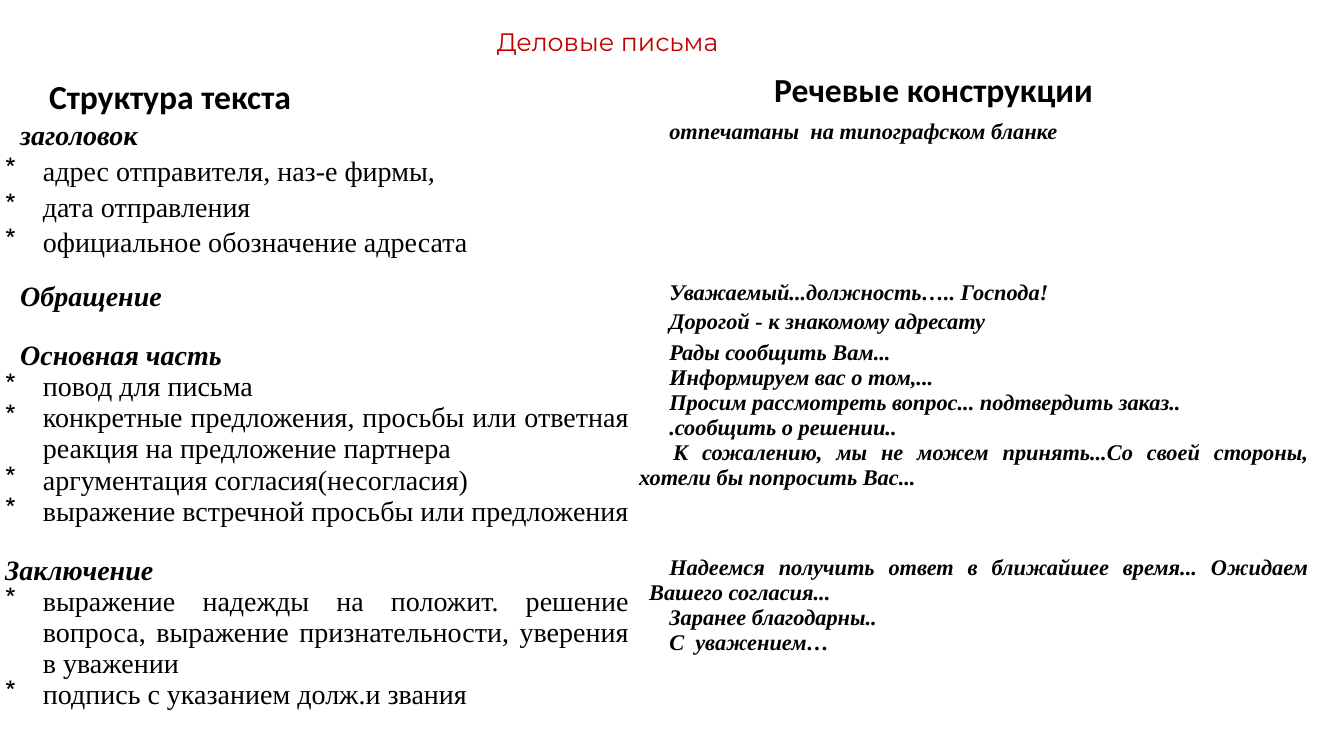
from dataclasses import dataclass

from lxml import etree
from pptx import Presentation
from pptx.dml.color import RGBColor
from pptx.enum.text import MSO_ANCHOR, MSO_AUTO_SIZE, PP_ALIGN
from pptx.oxml.ns import qn
from pptx.util import Pt

LEFT, CENTER, JUSTIFY = PP_ALIGN.LEFT, PP_ALIGN.CENTER, PP_ALIGN.JUSTIFY
TOP = MSO_ANCHOR.TOP
NO_FIT = MSO_AUTO_SIZE.NONE


@dataclass(frozen=True)
class Theme:
    ink: RGBColor = RGBColor(0, 0, 0)
    red: RGBColor = RGBColor(0xC0, 0, 0)
    serif: str = "Times New Roman"
    sans: str = "Calibri"
    title_font: str = "Montserrat"
    title: int = 18
    head: int = 24
    point: int = 20
    phrase: int = 16


THEME = Theme()
COLS = (452.9, 485.3)

# Row height, line spacing, indent of the name, name, points, phrases
SECTIONS = [
    (115.2, 1.15, 10.8, "заголовок",
     ["адрес отправителя, наз-е фирмы,",
      "дата отправления",
      "официальное обозначение адресата"],
     ["отпечатаны  на типографском бланке"]),
    (45.4, 1.15, 10.8, "Обращение", [],
     ["Уважаемый...должность….. Господа!",
      "Дорогой - к знакомому адресату"]),
    (153.4, 1.0, 10.8, "Основная часть",
     ["повод для письма",
      "конкретные предложения, просьбы или ответная реакция "
      "на предложение партнера",
      "аргументация согласия(несогласия)",
      "выражение встречной просьбы или предложения"],
     ["Рады сообщить Вам...",
      "Информируем вас о том,...",
      "Просим рассмотреть вопрос... подтвердить заказ..",
      ".сообщить о решении..",
      " К сожалению, мы не можем принять...Со своей стороны, "
      "хотели бы попросить Вас..."]),
    (127.4, 1.0, 0, "Заключение",
     ["выражение надежды на положит. решение вопроса, выражение "
      "признательности, уверения в уважении",
      "подпись с указанием долж.и звания"],
     ["Надеемся получить ответ в ближайшее время... "
      "Ожидаем Вашего согласия...",
      "Заранее благодарны..",
      "С  уважением…"]),
]


def write(frame, text, *, size, font=THEME.serif, color=THEME.ink, bold=False,
          italic=False, align=JUSTIFY, margin=0, indent=0, spacing=1.0,
          bullet=None):
    """Add a paragraph, filling the first one if it is still empty."""
    par = frame.paragraphs[0]
    if par.runs:
        par = frame.add_paragraph()
    par.alignment = align
    par.line_spacing = spacing
    props = par._p.get_or_add_pPr()
    props.set("marL", str(Pt(margin)))
    props.set("indent", str(Pt(indent)))
    if bullet:
        etree.SubElement(props, qn("a:buChar")).set("char", bullet)
    run = par.add_run()
    run.text = text
    face = run.font
    face.name, face.size = font, Pt(size)
    face.bold, face.italic = bold, italic
    face.color.rgb = color


def add_title(slide, text):
    title = slide.shapes.title
    title.left, title.top = Pt(74), Pt(15)
    title.width, title.height = Pt(720), Pt(30)
    frame = title.text_frame
    frame.auto_size = NO_FIT
    frame.vertical_anchor = TOP
    write(frame, text, size=THEME.title, font=THEME.title_font,
          color=THEME.red, align=CENTER)


def add_head(slide, text, left, top, width):
    box = slide.shapes.add_textbox(Pt(left), Pt(top), Pt(width), Pt(36))
    write(box.text_frame, text, size=THEME.head, font=THEME.sans,
          bold=True, align=LEFT)


def clear_cell(cell):
    """Strip the fill, set the margins and return the text frame."""
    cell.fill.background()
    cell.margin_left = cell.margin_right = Pt(3.6)
    cell.margin_top = cell.margin_bottom = 0
    return cell.text_frame


def add_sections(slide):
    frame = slide.shapes.add_table(len(SECTIONS), len(COLS), 0, Pt(82.8),
                                   Pt(sum(COLS)),
                                   Pt(sum(row[0] for row in SECTIONS)))
    table = frame.table
    table.first_row = table.horz_banding = False
    for col, width in zip(table.columns, COLS):
        col.width = Pt(width)
    for row, section in zip(table.rows, SECTIONS):
        height, spacing, indent, name, points, phrases = section
        row.height = Pt(height)
        left, right = [clear_cell(cell) for cell in row.cells]
        write(left, name, size=THEME.point, bold=True, italic=True,
              indent=indent, spacing=spacing)
        for point in points:
            write(left, point, size=THEME.point, margin=27, indent=-27,
                  spacing=spacing, bullet="*")
        for phrase in phrases:
            write(right, phrase, size=THEME.phrase, bold=True, italic=True,
                  margin=7.2, indent=14.4, spacing=spacing)
        for par in right.paragraphs[4:]:
            par._p.get_or_add_pPr().set("marL", "0")


def main():
    deck = Presentation()
    deck.slide_width, deck.slide_height = Pt(960), Pt(540)
    slide = deck.slides.add_slide(deck.slide_layouts[5])
    add_sections(slide)
    add_head(slide, "Речевые конструкции", 545.8, 46, 250)
    add_head(slide, "Структура текста", 28, 50.4, 200)
    add_title(slide, "Деловые письма")
    deck.save("out.pptx")


if __name__ == "__main__":
    main()
